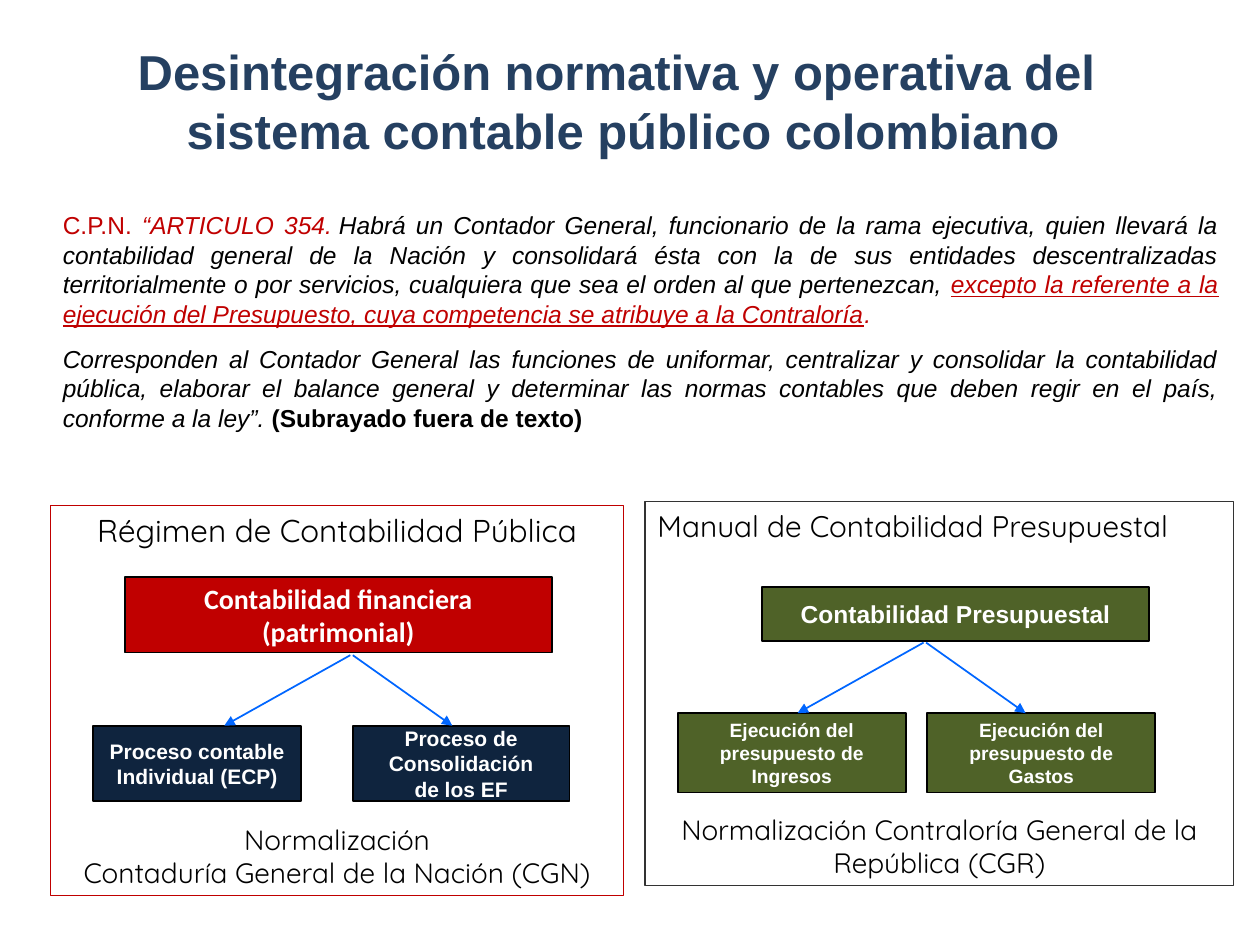
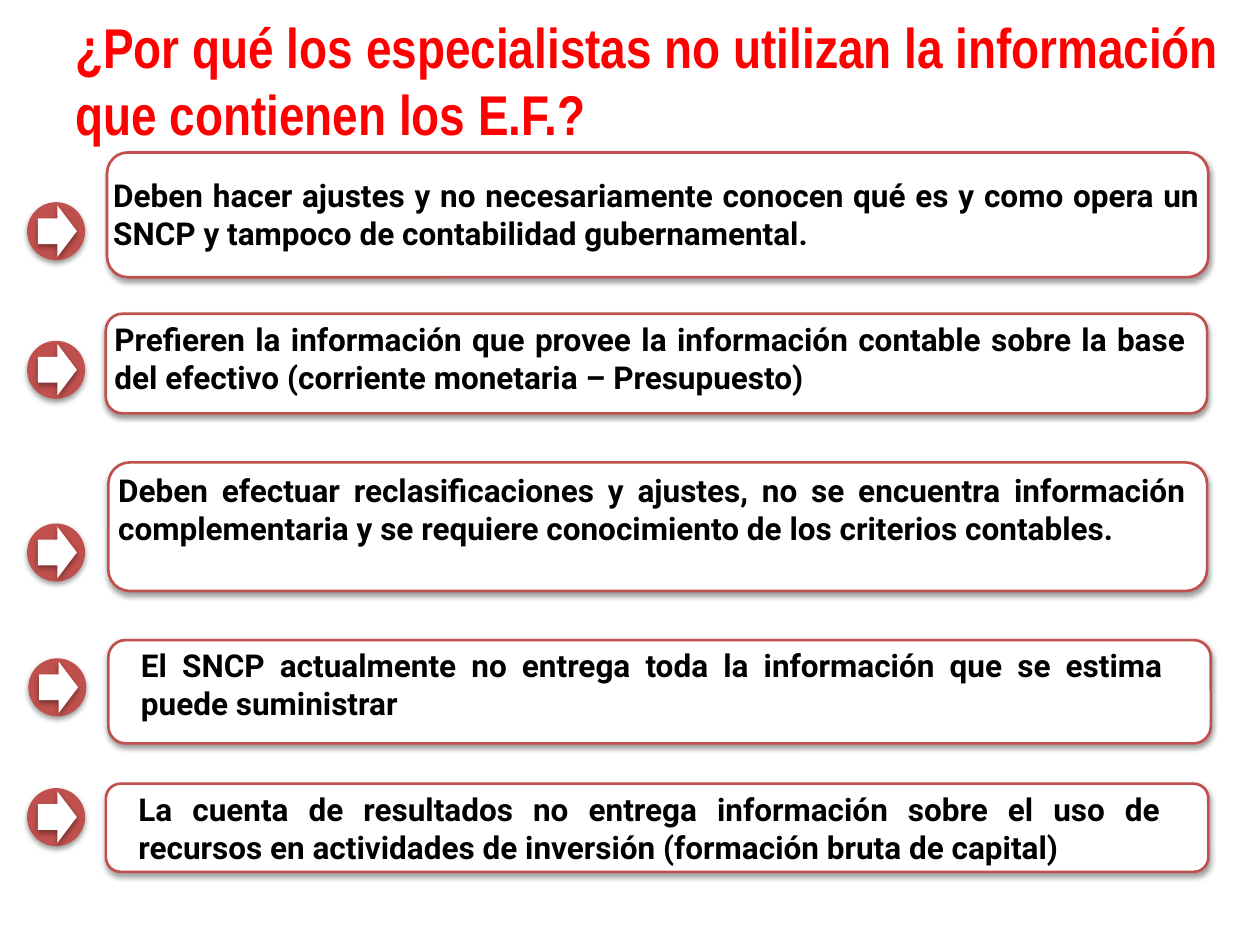
"""Build two slides on the Colombian public accounting system and the use of its statements."""
from lxml import etree
from pptx import Presentation
from pptx.dml.color import RGBColor
from pptx.enum.shapes import MSO_CONNECTOR, MSO_SHAPE
from pptx.enum.text import MSO_ANCHOR, PP_ALIGN
from pptx.oxml.ns import qn
from pptx.util import Inches, Pt

RECT, ROUND = MSO_SHAPE.RECTANGLE, MSO_SHAPE.ROUNDED_RECTANGLE
OVAL, ARROW = MSO_SHAPE.OVAL, MSO_SHAPE.RIGHT_ARROW
STRAIGHT = MSO_CONNECTOR.STRAIGHT
TOP, MIDDLE, BOTTOM = MSO_ANCHOR.TOP, MSO_ANCHOR.MIDDLE, MSO_ANCHOR.BOTTOM
LEFT, CENTER, JUSTIFY = PP_ALIGN.LEFT, PP_ALIGN.CENTER, PP_ALIGN.JUSTIFY

COLORS = {
    "white": "FFFFFF", "black": "000000", "title": "254061", "question": "FF0000",
    "red": "C00000", "green": "4F6228", "navy": "0F243E", "arrow": "0066FF",
    "coral": "C0504D", "frame": "333333",
}
FORMATS = {
    "title": {"name": "Arial", "size": Pt(28), "bold": True, "color": "title"},
    "question": {"name": "Arial Narrow", "size": Pt(32), "bold": True, "color": "question"},
    "law": {"name": "Arial", "size": Pt(14), "color": "red"},
    "law_name": {"name": "Arial", "size": Pt(14), "italic": True, "color": "red"},
    "law_text": {"name": "Arial", "size": Pt(14), "italic": True, "color": "black"},
    "law_stress": {"name": "Arial", "size": Pt(14), "italic": True, "underline": True,
                   "color": "red"},
    "law_note": {"name": "Arial", "size": Pt(14), "bold": True, "color": "black"},
    "regime": {"name": "Quicksand", "size": Pt(18), "color": "black"},
    "manual": {"name": "Quicksand", "size": Pt(17), "color": "black"},
    "norm": {"name": "Quicksand", "size": Pt(16), "color": "black"},
    "financial": {"name": "Calibri", "size": Pt(16), "bold": True, "color": "white"},
    "budget": {"name": "Arial", "size": Pt(14), "bold": True, "color": "white"},
    "process": {"name": "Arial", "size": Pt(12), "bold": True, "color": "white"},
    "execution": {"name": "Arial", "size": Pt(11), "bold": True, "color": "white"},
    "reason": {"name": "Roboto", "size": Pt(18), "bold": True, "color": "black"},
}


def add_block(shapes, kind, place, fill=None, line=None, width=1, shadow=False):
    """Add a preset shape, unfilled or unlined where no colour is given."""
    block = shapes.add_shape(kind, *map(Inches, place))
    if fill:
        block.fill.solid()
        block.fill.fore_color.rgb = RGBColor.from_string(COLORS[fill])
    else:
        block.fill.background()
    if line:
        block.line.color.rgb = RGBColor.from_string(COLORS[line])
        block.line.width = Pt(width)
    else:
        block.line.fill.background()
    block.shadow.inherit = False
    if shadow:
        effects = block._element.spPr.find(qn("a:effectLst"))
        outer = etree.SubElement(effects, qn("a:outerShdw"), blurRad="40000", dist="20000",
                                 dir="5400000", rotWithShape="0")
        tint = etree.SubElement(outer, qn("a:srgbClr"), val=COLORS["black"])
        etree.SubElement(tint, qn("a:alpha"), val="38000")
    return block


def write(shape, paragraphs, align=LEFT, anchor=TOP, gap=0, wrap=True):
    """Fill a shape with paragraphs, each a list of (text, format name) runs."""
    frame = shape.text_frame
    frame.word_wrap = wrap
    frame.vertical_anchor = anchor
    for number, runs in enumerate(paragraphs):
        paragraph = frame.add_paragraph() if number else frame.paragraphs[0]
        paragraph.alignment = align
        if number and gap:
            paragraph.space_before = Pt(gap)
        for text, style in runs:
            run = paragraph.add_run()
            run.text = text
            for key, value in FORMATS[style].items():
                if key == "color":
                    run.font.color.rgb = RGBColor.from_string(COLORS[value])
                else:
                    setattr(run.font, key, value)


deck = Presentation()
deck.slide_width, deck.slide_height = Inches(10), Inches(7.5)
blank = deck.slide_layouts[6]

system = deck.slides.add_slide(blank).shapes
title = add_block(system, RECT, (0.59, 0.13, 8.71, 1.34), "white", "white")
write(title, [[("Desintegración normativa y operativa del ", "title")],
              [("sistema contable público colombiano", "title")]], CENTER, MIDDLE, wrap=False)

article = system.add_textbox(Inches(0.4), Inches(1.62), Inches(9.37), Inches(1.95))
write(article, [
    [("C.P.N. ", "law"), ("“ARTICULO 354.\u00a0", "law_name"),
     ("Habrá un Contador General, funcionario de la rama ejecutiva, quien llevará la "
      "contabilidad general de la Nación y consolidará ésta con la de sus entidades "
      "descentralizadas territorialmente o por servicios, cualquiera que sea el orden al que "
      "pertenezcan, ", "law_text"),
     ("excepto la referente a la ejecución del Presupuesto, cuya competencia se atribuye a la "
      "Contraloría", "law_stress"), (".", "law_name")],
    [("Corresponden al Contador General las funciones de uniformar, centralizar y consolidar la "
      "contabilidad pública, elaborar el balance general y determinar las normas contables que "
      "deben regir en el país, conforme a la ley”. ", "law_text"),
     ("(Subrayado fuera de texto)", "law_note")],
], JUSTIFY, gap=9)

regimes = [
    ((0.4, 4.01, 4.55, 3.1), "red", "Régimen de Contabilidad Pública", "regime", CENTER,
     ["Normalización", "Contaduría General de la Nación (CGN)"]),
    ((5.12, 3.98, 4.67, 3.05), "frame", "Manual de Contabilidad Presupuestal", "manual", LEFT,
     ["Normalización Contraloría General de la República (CGR)"]),
]
for place, border, heading, style, align, norms in regimes:
    write(add_block(system, RECT, place, line=border, width=0.75), [[(heading, style)]], align)
    left, top, width, height = place
    norm = system.add_textbox(Inches(left), Inches(top + height - 0.7), Inches(width), Inches(0.7))
    write(norm, [[(text, "norm")] for text in norms], CENTER, BOTTOM)

boxes = [
    ((0.99, 4.58, 3.39, 0.6), "red", "financial", ["Contabilidad financiera", "(patrimonial)"]),
    ((0.74, 5.76, 1.65, 0.6), "navy", "process", ["Proceso contable", "Individual (ECP)"]),
    ((2.8, 5.76, 1.72, 0.6), "navy", "process",
     ["Proceso de", "Consolidación", "de los EF"]),
    ((6.05, 4.66, 3.07, 0.43), "green", "budget", ["Contabilidad Presupuestal"]),
    ((5.38, 5.66, 1.81, 0.63), "green", "execution",
     ["Ejecución del", "presupuesto de", "Ingresos"]),
    ((7.36, 5.66, 1.81, 0.63), "green", "execution",
     ["Ejecución del", "presupuesto de", "Gastos"]),
]
for place, fill, style, lines in boxes:
    write(add_block(system, RECT, place, fill, "black"),
          [[(text, style)] for text in lines], CENTER, MIDDLE, wrap=False)

for fork_x, fork_y in [(2.78, 5.2), (7.33, 5.1)]:
    for start, reach in [(0, -1), (0.02, 0.81)]:
        branch = system.add_connector(STRAIGHT, Inches(fork_x + start), Inches(fork_y),
                                      Inches(fork_x + reach), Inches(fork_y + 0.56))
        branch.line.color.rgb = RGBColor.from_string(COLORS["arrow"])
        branch.line.width = Pt(1)
        properties = branch._element.spPr
        etree.SubElement(properties.find(qn("a:ln")), qn("a:tailEnd"), type="triangle")
        etree.SubElement(properties, qn("a:effectLst"))

reasons_slide = deck.slides.add_slide(blank).shapes
question = reasons_slide.add_textbox(Inches(0.5), Inches(0.04), Inches(9.42), Inches(1.18))
write(question, [[("¿Por qué los especialistas no utilizan la información que contienen los E.F.?",
                   "question")]], anchor=MIDDLE)

reasons = [
    ((0.85, 1.21, 8.74, 0.99), (0.8, 1.35, 8.82), (0.22, 1.61),
     "Deben hacer ajustes y no necesariamente conocen qué es y como opera un SNCP y tampoco de "
     "contabilidad gubernamental."),
    ((0.84, 2.49, 8.74, 0.79), (0.81, 2.49, 8.7), (0.22, 2.71),
     "Prefieren la información que provee la información contable sobre la base del efectivo "
     "(corriente monetaria – Presupuesto)"),
    ((0.86, 3.67, 8.72, 1.02), (0.84, 3.69, 8.67), (0.22, 4.16),
     "Deben efectuar reclasificaciones y ajustes, no se encuentra información complementaria y "
     "se requiere conocimiento de los criterios contables."),
    ((0.86, 5.08, 8.75, 0.82), (1.02, 5.08, 8.31), (0.23, 5.23),
     "El SNCP actualmente no entrega toda la información que se estima puede suministrar"),
    ((0.84, 6.22, 8.75, 0.7), (1, 6.22, 8.31), (0.22, 6.26),
     "La cuenta de resultados no entrega información sobre el uso de recursos en actividades de "
     "inversión (formación bruta de capital)"),
]
for card, text_place, (marker_x, marker_y), text in reasons:
    add_block(reasons_slide, ROUND, card, "white", "coral", 1.5, shadow=True)
    reason = reasons_slide.add_textbox(*map(Inches, text_place), Inches(0.71))
    write(reason, [[(text, "reason")]], JUSTIFY)
    marker = reasons_slide.add_group_shape().shapes
    add_block(marker, OVAL, (marker_x, marker_y, 0.45, 0.45), "coral", "coral", 0.75, shadow=True)
    add_block(marker, ARROW, (marker_x + 0.08, marker_y + 0.02, 0.31, 0.41), "white", shadow=True)

deck.save("out.pptx")
